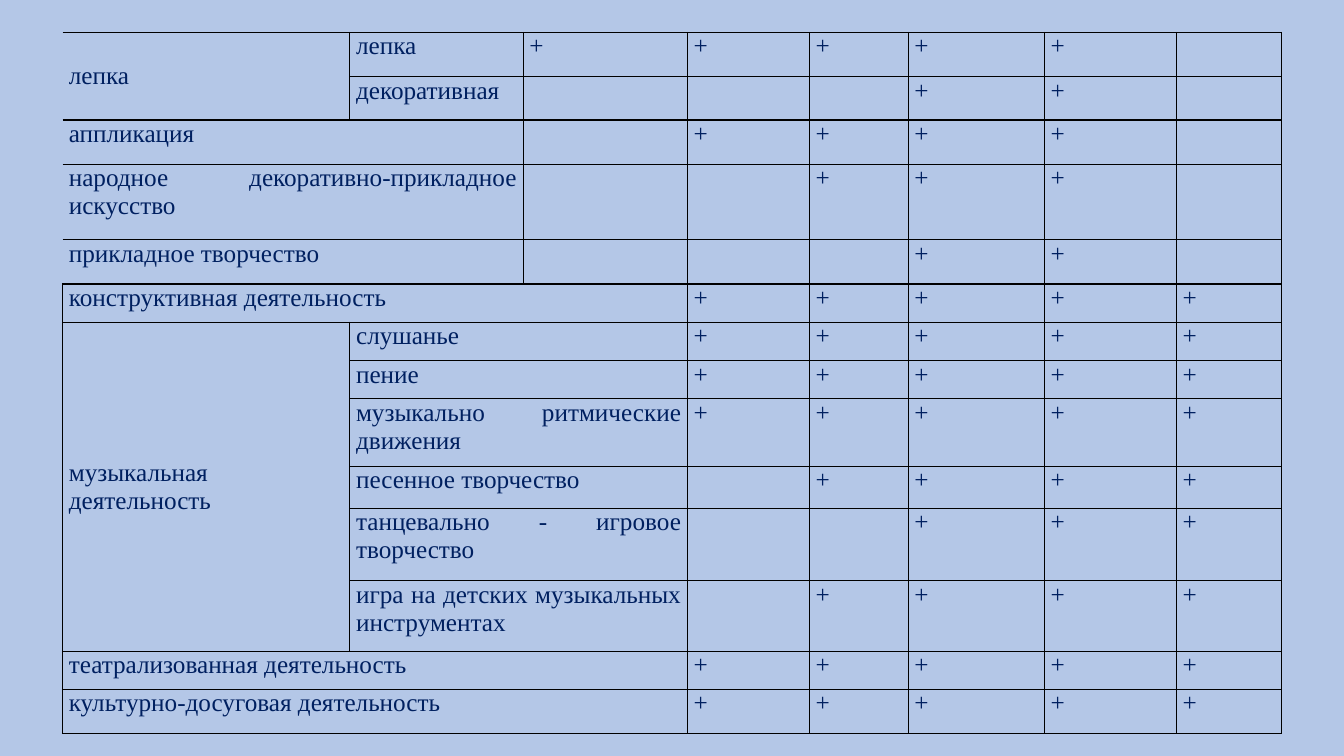
from lxml import etree
from pptx import Presentation
from pptx.dml.color import RGBColor
from pptx.enum import text as t
from pptx.oxml import ns
from pptx.util import Pt

COLORS = {"background": "B4C7E7", "text": "002060", "border": "000000"}
FONT = "Times New Roman"
COL_WIDTHS = [205.2, 123.8, 117.4, 87.1, 70.6, 97.2, 94.3, 74.9]
FIRST_MARK = 2   # column where the plus signs start
OPEN_ROWS = 5    # upper rows have no left border

# Row height, labels as (column, text, rows spanned, columns spanned), marks
ROWS = [
    (31.7, [(0, "лепка", 2, 1), (1, "лепка", 1, 1)], "+++++."),
    (31, [(1, "декоративная", 1, 1)], "...++."),
    (31.7, [(0, "аппликация", 1, 2)], ".++++."),
    (54, [(0, "народное декоративно-прикладное искусство", 1, 2)], "..+++."),
    (31.7, [(0, "прикладное творчество", 1, 2)], "...++."),
    (27.4, [(0, "конструктивная деятельность", 1, 3)], ".+++++"),
    (27.4, [(0, "музыкальная деятельность", 6, 1),
            (1, "слушанье", 1, 2)], ".+++++"),
    (27.4, [(1, "пение", 1, 2)], ".+++++"),
    (48.2, [(1, "музыкально ритмические движения", 1, 2)], ".+++++"),
    (30.2, [(1, "песенное творчество", 1, 2)], "..++++"),
    (51.8, [(1, "танцевально - игровое творчество", 1, 2)], "...+++"),
    (50.4, [(1, "игра на детских музыкальных инструментах", 1, 2)], "..++++"),
    (27.4, [(0, "театрализованная деятельность", 1, 3)], ".+++++"),
    (31.7, [(0, "культурно-досуговая деятельность", 1, 3)], ".+++++"),
]


def write(cell, words, size=18, color="text", align=t.PP_ALIGN.JUSTIFY,
          anchor=t.MSO_ANCHOR.TOP):
    cell.vertical_anchor = anchor
    p = cell.text_frame.paragraphs[0]
    p.alignment = align
    r = p.add_run()
    r.text = words
    r.font.name, r.font.size = FONT, Pt(size)
    r.font.color.rgb = RGBColor.from_string(COLORS[color])


def style_cell(cell, open_left):
    cell.margin_left = cell.margin_right = Pt(4.5)
    cell.margin_top = cell.margin_bottom = Pt(0)
    tc_pr = cell._tc.get_or_add_tcPr()
    for side in "LRTB":
        ln = etree.SubElement(tc_pr, ns.qn(f"a:ln{side}"), w=str(Pt(1)))
        if side == "L" and open_left:
            etree.SubElement(ln, ns.qn("a:noFill"))
        else:
            fill = etree.SubElement(ln, ns.qn("a:solidFill"))
            etree.SubElement(fill, ns.qn("a:srgbClr"), val=COLORS["border"])
    cell.fill.background()


def activity_table(s, left, top, width, height):
    table = s.shapes.add_table(len(ROWS), len(COL_WIDTHS), Pt(left), Pt(top),
                               Pt(width), Pt(height)).table
    table.first_row = table.horz_banding = False

    # Grid, scaled to the box
    for column, w in zip(table.columns, COL_WIDTHS):
        column.width = Pt(w * width / sum(COL_WIDTHS))
    total = sum(row[0] for row in ROWS)
    for i, (h, labels, marks) in enumerate(ROWS):
        table.rows[i].height = Pt(h * height / total)
        for j in range(len(COL_WIDTHS)):
            style_cell(table.cell(i, j), j == 0 and i < OPEN_ROWS)

    # Labels and marks
    for i, (h, labels, marks) in enumerate(ROWS):
        for j, words, down, across in labels:
            cell = table.cell(i, j)
            if down > 1 or across > 1:
                cell.merge(table.cell(i + down - 1, j + across - 1))
            if down > 1:
                write(cell, words, align=t.PP_ALIGN.LEFT,
                      anchor=t.MSO_ANCHOR.MIDDLE)
            else:
                write(cell, words)
        for j, mark in enumerate(marks, FIRST_MARK):
            if mark == "+":
                write(table.cell(i, j), mark)


def main():
    prs = Presentation()
    prs.slide_width, prs.slide_height = Pt(960), Pt(540)
    s = prs.slides.add_slide(prs.slide_layouts[6])
    s.background.fill.solid()
    s.background.fill.fore_color.rgb = RGBColor.from_string(COLORS["background"])
    activity_table(s, 44.7, 23.2, 870.5, 501)
    prs.save("out.pptx")


if __name__ == "__main__":
    main()
